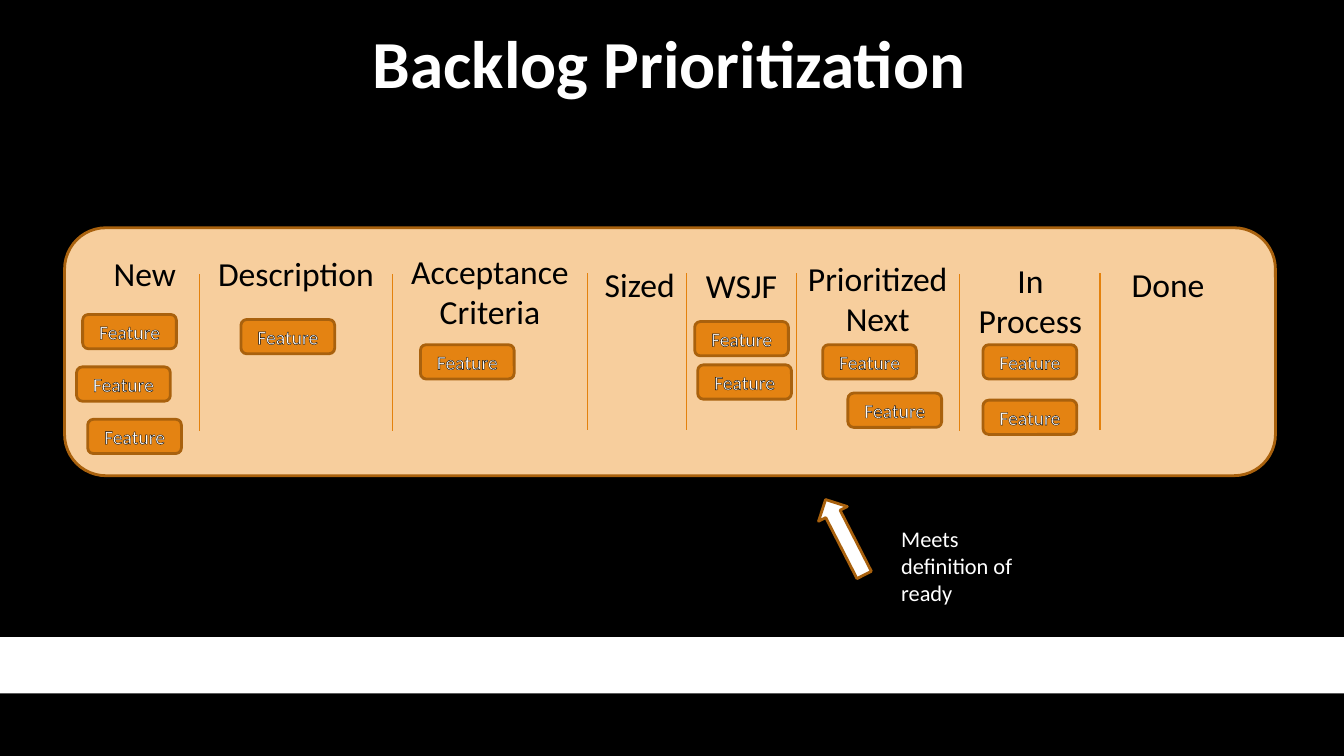
from dataclasses import dataclass

from lxml import etree
from pptx import Presentation
from pptx.dml.color import RGBColor
from pptx.enum.shapes import MSO_CONNECTOR, MSO_SHAPE
from pptx.enum.text import MSO_ANCHOR, MSO_AUTO_SIZE, PP_ALIGN
from pptx.oxml.ns import qn
from pptx.util import Inches, Pt

RECTANGLE = MSO_SHAPE.RECTANGLE
ROUNDED = MSO_SHAPE.ROUNDED_RECTANGLE
UP_ARROW = MSO_SHAPE.UP_ARROW
STRAIGHT = MSO_CONNECTOR.STRAIGHT
TOP, MIDDLE = MSO_ANCHOR.TOP, MSO_ANCHOR.MIDDLE
GROW = MSO_AUTO_SIZE.SHAPE_TO_FIT_TEXT
LEFT, CENTER = PP_ALIGN.LEFT, PP_ALIGN.CENTER

FONT = "Calibri"
COLORS = {
    "black": "000000",
    "white": "FFFFFF",
    "board": "F7CE9D",
    "feature": "E48312",
    "border": "A9610D",
    "divider": "E4810C",
}
CARD_WIDTH, CARD_HEIGHT = 0.93, 0.34
DIVIDER_HEIGHT = 1.56


@dataclass(frozen=True)
class Area:
    left: float
    top: float
    width: float
    height: float

    def lengths(self):
        return [Inches(value) for value in (self.left, self.top, self.width, self.height)]


@dataclass(frozen=True)
class Stage:
    name: str
    label: Area
    cards: tuple = ()  # left and top of each feature card


STAGES = [
    Stage("New", Area(0.89, 2.46, 1.09, 0.52), ((0.82, 3.12), (0.76, 3.64), (0.87, 4.16))),
    Stage("Description", Area(1.98, 2.46, 1.91, 0.5), ((2.39, 3.17),)),
    Stage("Acceptance Criteria", Area(3.89, 2.44, 1.94, 0.91), ((4.17, 3.42),)),
    Stage("Sized", Area(5.8, 2.57, 1.09, 0.52)),
    Stage("WSJF", Area(6.81, 2.58, 1.09, 0.5), ((6.92, 3.62), (6.89, 3.19))),
    Stage("Prioritized Next", Area(7.9, 2.51, 1.61, 0.91), ((8.16, 3.42), (8.41, 3.9))),
    Stage("In Process", Area(9.52, 2.53, 1.4, 0.91), ((9.75, 3.42), (9.75, 3.97))),
    Stage("Done", Area(11.04, 2.57, 1.09, 0.52)),
]
DIVIDERS = [(1.98, 2.72), (3.89, 2.72), (5.83, 2.71), (6.81, 2.71),
            (7.9, 2.71), (9.52, 2.72), (10.91, 2.71)]


def color(name: str) -> RGBColor:
    return RGBColor.from_string(COLORS[name])


def write(shape, text: str, size: int, ink: str, align=CENTER, anchor=TOP, bold=False):
    """Fill the shape with one styled run and return its paragraph and run."""
    frame = shape.text_frame
    frame.word_wrap = True
    frame.vertical_anchor = anchor
    para = frame.paragraphs[0]
    para.alignment = align
    span = para.add_run()
    span.text = text
    span.font.name = FONT
    span.font.size = Pt(size)
    span.font.bold = bold
    span.font.color.rgb = color(ink)
    return para, span


def add_label(page, area: Area, text: str, size: int, ink: str, align=CENTER) -> None:
    box = page.shapes.add_textbox(*area.lengths())
    write(box, text, size, ink, align)
    box.text_frame.auto_size = GROW


def add_block(page, kind, area: Area, fill: str, border: str = ""):
    block = page.shapes.add_shape(kind, *area.lengths())
    block.shadow.inherit = False
    block.fill.solid()
    block.fill.fore_color.rgb = color(fill)
    if border:
        block.line.color.rgb = color(border)
        block.line.width = Pt(2)
    else:
        block.line.fill.background()
    return block


def add_card(page, left: float, top: float) -> None:
    card = add_block(page, ROUNDED, Area(left, top, CARD_WIDTH, CARD_HEIGHT), "feature", "border")
    span = write(card, "Feature", 14, "white", anchor=MIDDLE)[1]
    # Thin black outline around the letters
    outline = etree.Element(qn("a:ln"), w=str(Pt(0.75)))
    fill = etree.SubElement(outline, qn("a:solidFill"))
    etree.SubElement(fill, qn("a:srgbClr"), val=COLORS["black"])
    span.font._element.insert(0, outline)


def add_divider(page, left: float, top: float) -> None:
    line = page.shapes.add_connector(
        STRAIGHT, Inches(left), Inches(top), Inches(left), Inches(top + DIVIDER_HEIGHT))
    line.line.color.rgb = color("divider")
    line.line.width = Pt(0.75)
    etree.SubElement(line._element.spPr, qn("a:effectLst"))


def add_title(page, text: str) -> None:
    box = page.shapes.add_textbox(*Area(0.57, 0.18, 12.14, 0.96).lengths())
    frame = box.text_frame
    frame.margin_left = frame.margin_right = frame.margin_top = frame.margin_bottom = 0
    para, _ = write(box, text, 48, "white", anchor=MIDDLE, bold=True)
    para.line_spacing = 0.9


def main() -> None:
    deck = Presentation()
    deck.slide_width, deck.slide_height = Inches(13.33), Inches(7.5)
    page = deck.slides.add_slide(deck.slide_layouts[6])
    page.background.fill.solid()
    page.background.fill.fore_color.rgb = color("black")

    # Footer band and title
    add_block(page, RECTANGLE, Area(0, 6.32, 13.33, 0.56), "white")
    add_title(page, "Backlog Prioritization")

    # Board with its stages
    add_block(page, ROUNDED, Area(0.64, 2.26, 12.01, 2.46), "board", "border")
    for stage in STAGES:
        add_label(page, stage.label, stage.name, 24, "black")
    for left, top in DIVIDERS:
        add_divider(page, left, top)
    for stage in STAGES:
        for left, top in stage.cards:
            add_card(page, left, top)

    # Note on readiness
    add_label(page, Area(8.84, 5.16, 1.53, 0.91), "Meets definition of ready", 16, "white", LEFT)
    arrow = add_block(page, UP_ARROW, Area(8.22, 4.91, 0.32, 0.84), "white", "border")
    arrow.rotation = 332.9

    deck.save("out.pptx")


if __name__ == "__main__":
    main()
